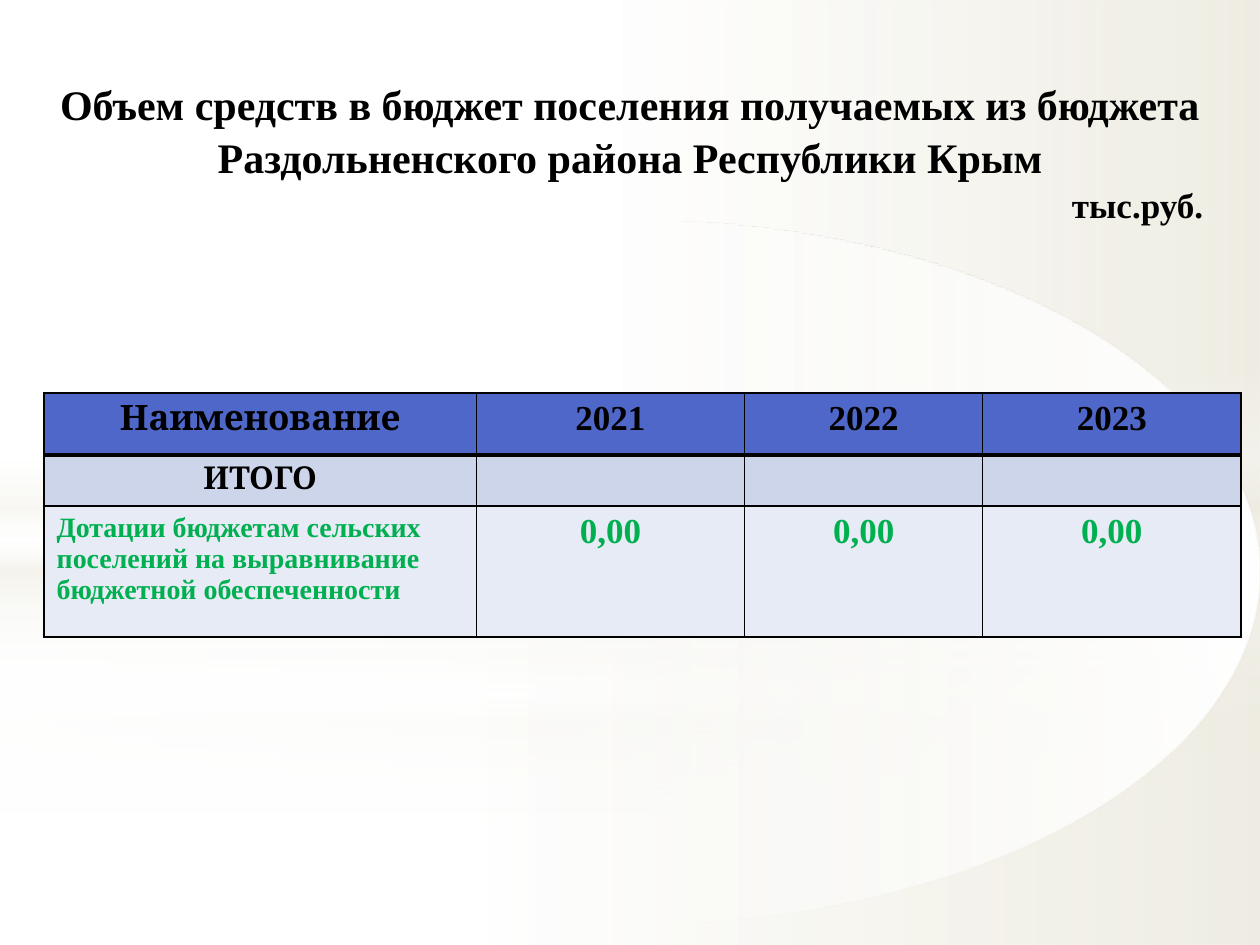
import dataclasses

import pptx
import pptx.dml.color
import pptx.enum.shapes
import pptx.enum.text
import pptx.oxml
import pptx.oxml.ns
import pptx.util

Inches = pptx.util.Inches
Pt = pptx.util.Pt
ALIGN = pptx.enum.text.PP_ALIGN
SHAPE = pptx.enum.shapes.MSO_SHAPE
NS = pptx.oxml.ns.nsdecls("a")


@dataclasses.dataclass(frozen=True)
class Theme:
    serif: str = "Times New Roman"
    head: str = "Cambria"
    ink: str = "000000"
    green: str = "00B050"
    white: str = "FFFFFF"
    cream: str = "EEECE1"
    fills: tuple = ("4E67C8", "CCD5EA", "E7EBF5")
    title: int = 24
    large: int = 20
    total: int = 18
    small: int = 16
    thin: float = 0.96
    thick: float = 3


THEME = Theme()
HEADER = ["Наименование", "2021", "2022", "2023"]
TOTAL = ["ИТОГО", "", "", ""]
GRANT = ["Дотации бюджетам сельских поселений на выравнивание "
         "бюджетной обеспеченности", "0,00", "0,00", "0,00"]


def style(para, font, size, color):
    for run in para.runs:
        run.font.name = font
        run.font.size = Pt(size)
        run.font.bold = True
        run.font.color.rgb = pptx.dml.color.RGBColor.from_string(color)


def shade(slide, kind, box, stops, angle):
    """Add a borderless shape with a gradient of (position, colour, opacity) stops."""
    shape = slide.shapes.add_shape(kind, *map(Inches, box))
    marks = "".join(
        f'<a:gs pos="{pos * 1000}"><a:srgbClr val="{color}">'
        f'<a:alpha val="{alpha * 1000}"/></a:srgbClr></a:gs>'
        for pos, color, alpha in stops)
    grad = pptx.oxml.parse_xml(
        f'<a:gradFill {NS} rotWithShape="1"><a:gsLst>{marks}</a:gsLst>'
        f'<a:lin ang="{angle * 60000}" scaled="0"/></a:gradFill>')
    shape._element.spPr.insert(2, grad)
    shape.line.fill.background()
    shape.shadow.inherit = False


def backdrop(slide, split, glow, fade, extra):
    """Draw one layer: lower and upper washes, a soft band and an ellipse."""
    white, cream = THEME.white, THEME.cream
    low = [(0, white, 91 + extra), (37, white, 76 + extra), (100, cream, 79 + extra)]
    high = [(0, white, 89 + extra), (48, white, 62 + extra), (100, cream, 79 + extra)]
    band = [(0, white, 0), (29, white, 30), (45, cream, 40),
            (55, white, 26), (65, cream, 60), (100, white, 0)]
    shade(slide, SHAPE.RECTANGLE, (0, split, 10, 7.5 - split), low, 0)
    shade(slide, SHAPE.RECTANGLE, (0, 0, 10, split), high, 0)
    shade(slide, SHAPE.RECTANGLE, (0, glow, 10, 2.5), band, 90)
    shade(slide, SHAPE.OVAL, (0, 1.75, 10, 5.58),
          [(0, white, 100), (fade, white, 0)], 180)


def heading(slide, box):
    title = slide.shapes.title
    title.left, title.top, title.width, title.height = map(Inches, box)
    slide.shapes._spTree.append(title._element)  # bring above the backdrop
    frame = title.text_frame
    frame.auto_size = pptx.enum.text.MSO_AUTO_SIZE.NONE
    frame.vertical_anchor = pptx.enum.text.MSO_ANCHOR.MIDDLE
    frame.margin_left = frame.margin_right = Inches(0.45)
    frame.text = ("Объем средств в бюджет поселения получаемых из бюджета "
                  "Раздольненского района Республики Крым\nтыс.руб.")
    looks = [(ALIGN.CENTER, THEME.title), (ALIGN.RIGHT, THEME.large)]
    for para, (align, size) in zip(frame.paragraphs, looks):
        para.alignment = align
        para.line_spacing = 1.05
        para.space_before = Pt(0)
        style(para, THEME.serif, size, THEME.ink)


def border(cell, **widths):
    props = cell._tc.get_or_add_tcPr()
    for side in "LRTB":
        width = Pt(widths.get(side, THEME.thin))
        props.append(pptx.oxml.parse_xml(
            f'<a:ln{side} {NS} w="{width}"><a:solidFill>'
            f'<a:srgbClr val="{THEME.ink}"/></a:solidFill></a:ln{side}>'))


def budget(slide, box):
    widths, heights = (3.43, 2.13, 1.89, 2.05), (0.49, 0.37, 1.04)
    rows = [HEADER, TOTAL, GRANT]
    edges = [{"B": THEME.thick}, {"T": THEME.thick}, {}]
    first = [(THEME.head, THEME.large), (THEME.head, THEME.total),
             (THEME.serif, THEME.small)]
    table = slide.shapes.add_table(3, 4, *map(Inches, box)).table
    for col, width in zip(table.columns, widths):
        col.width = Inches(width)
    for r, texts in enumerate(rows):
        table.rows[r].height = Inches(heights[r])
        for c, text in enumerate(texts):
            cell = table.cell(r, c)
            border(cell, **edges[r])
            cell.fill.solid()
            cell.fill.fore_color.rgb = pptx.dml.color.RGBColor.from_string(
                THEME.fills[r])
            cell.text_frame.text = text
            para = cell.text_frame.paragraphs[0]
            label = r == 2 and c == 0
            para.alignment = ALIGN.LEFT if label else ALIGN.CENTER
            font, size = first[r] if c == 0 else (THEME.serif, THEME.large)
            style(para, font, size, THEME.green if r == 2 else THEME.ink)


def main():
    deck = pptx.Presentation()
    deck.slide_width, deck.slide_height = Inches(10), Inches(7.5)
    slide = deck.slides.add_slide(deck.slide_layouts.get_by_name("Title Only"))
    backdrop(slide, split=5.58, glow=4.12, fade=56, extra=0)
    backdrop(slide, split=4.23, glow=2.9, fade=54, extra=1)
    budget(slide, (0.35, 3.12, 9.5, 1.9))
    heading(slide, (0, 0.6, 10, 1.19))
    deck.save("out.pptx")


if __name__ == "__main__":
    main()
